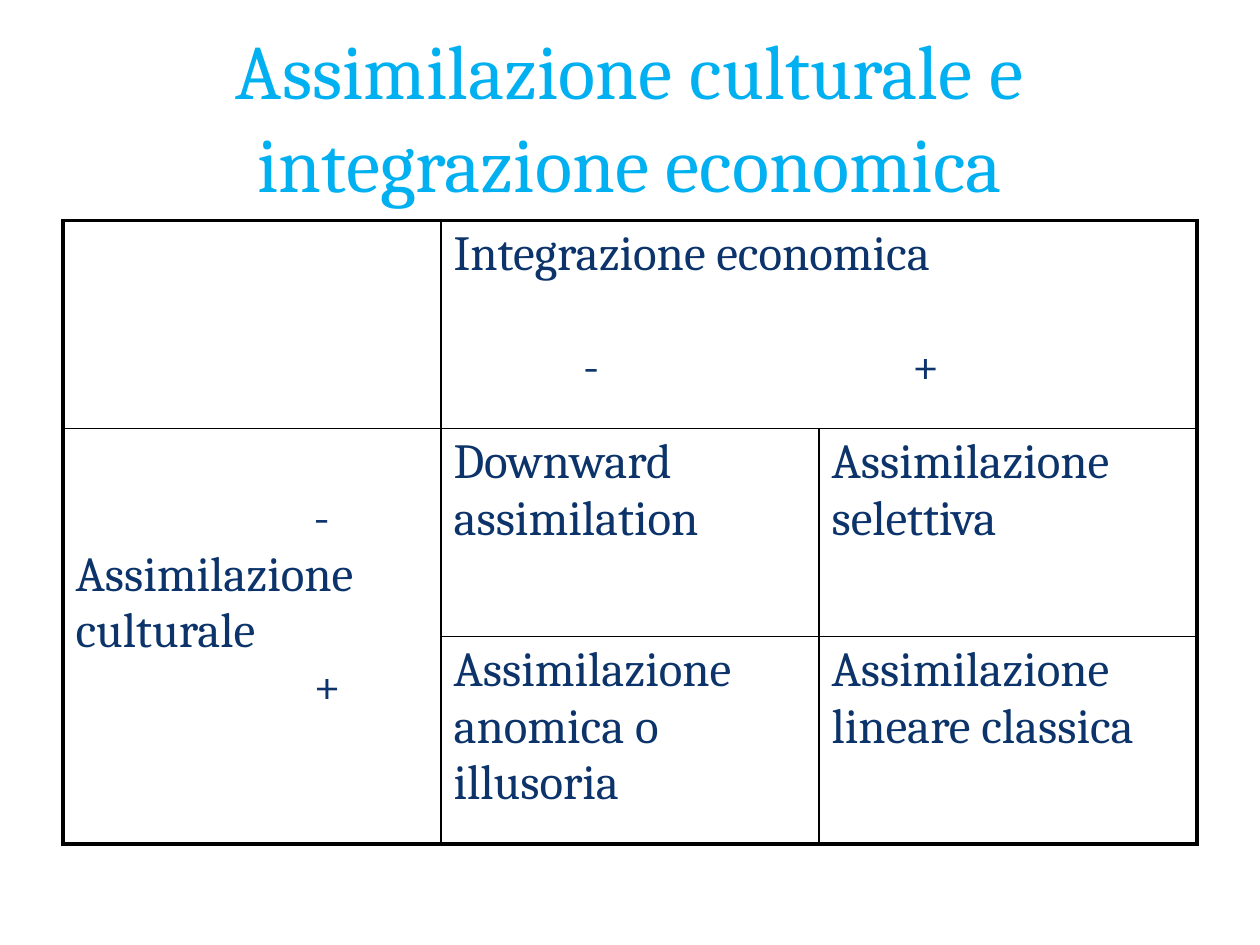
from pptx import Presentation
from pptx.dml.color import RGBColor
from pptx.enum import text
from pptx.oxml import ns
from pptx.util import Pt
from lxml import etree

SKY = RGBColor(0x00, 0xB0, 0xF0)
NAVY = RGBColor(0x0C, 0x34, 0x6B)
BLACK = RGBColor(0, 0, 0)
FONT = "Cambria"
LINE = 32  # height of one line of table text
MARGIN = 3.6
SIZE = 3  # rows and columns
COLUMN, ROW = 216, 118.8
OUTER, INNER = 2.25, 1

CELLS = {
    (0, 1): ["Integrazione economica", "\t-\t+"],
    (1, 0): ["\t-", "Assimilazione", "culturale", "\t+"],
    (1, 1): ["Downward", "assimilation"],
    (1, 2): ["Assimilazione selettiva"],
    (2, 1): ["Assimilazione", "anomica o", "illusoria"],
    (2, 2): ["Assimilazione lineare classica"],
}
TABS = {(0, 1): [74, 262], (1, 0): [136]}


def style(font, size, color):
    font.name, font.size, font.color.rgb = FONT, Pt(size), color


def add_title(page, words):
    title = page.shapes.title
    title.left, title.top, title.width, title.height = Pt(36), Pt(9.36), Pt(648), Pt(128.88)
    frame = title.text_frame
    frame.text = words
    frame.word_wrap = True
    frame.auto_size = text.MSO_AUTO_SIZE.NONE
    frame.vertical_anchor = text.MSO_ANCHOR.TOP
    para = frame.paragraphs[0]
    para.alignment = text.PP_ALIGN.CENTER
    style(para.runs[0].font, 44, SKY)


def add_tabs(para, stops):
    tabs = etree.SubElement(para._p.get_or_add_pPr(), ns.qn("a:tabLst"))
    for stop in stops:
        etree.SubElement(tabs, ns.qn("a:tab"), pos=str(Pt(stop)), algn="l")


def draw_borders(cell, row, column):
    """Heavy lines on the table's outer edge, thin ones inside; spans count."""
    edges = {
        "L": column == 0,
        "R": column + cell.span_width >= SIZE,
        "T": row == 0,
        "B": row + cell.span_height >= SIZE,
    }
    properties = cell._tc.get_or_add_tcPr()
    for place, (side, outside) in enumerate(edges.items()):
        width = Pt(OUTER if outside else INNER)
        line = etree.Element(ns.qn("a:ln" + side), w=str(width))
        fill = etree.SubElement(line, ns.qn("a:solidFill"))
        etree.SubElement(fill, ns.qn("a:srgbClr"), val=str(BLACK))
        properties.insert(place, line)


def fill_cell(cell, lines, stops):
    cell.text_frame.text = "\n".join(lines)
    for para in cell.text_frame.paragraphs:
        if para.text.startswith("\t"):
            add_tabs(para, stops)
        for span in para.runs:
            style(span.font, 28, NAVY)


def add_matrix(page):
    table = page.shapes.add_table(
        SIZE, SIZE, Pt(36), Pt(126), Pt(SIZE * COLUMN), Pt(SIZE * ROW)).table
    table.first_row = table.horz_banding = False
    for index in range(SIZE):
        table.columns[index].width = Pt(COLUMN)
        table.rows[index].height = Pt(ROW)

    economic, cultural = table.cell(0, 1), table.cell(1, 0)
    economic.merge(table.cell(0, 2))
    cultural.merge(table.cell(2, 0))

    for row in range(SIZE):
        for column in range(SIZE):
            cell = table.cell(row, column)
            cell.fill.background()
            draw_borders(cell, row, column)
            place = row, column
            if place in CELLS:
                fill_cell(cell, CELLS[place], TABS.get(place, []))

    economic.text_frame.paragraphs[1].space_before = Pt(LINE)
    cultural.margin_top = Pt(MARGIN + LINE)


def main():
    deck = Presentation()
    deck.slide_width, deck.slide_height = Pt(720), Pt(540)
    page = deck.slides.add_slide(deck.slide_layouts[5])
    add_title(page, "Assimilazione culturale e integrazione economica")
    add_matrix(page)
    deck.save("out.pptx")


if __name__ == "__main__":
    main()
